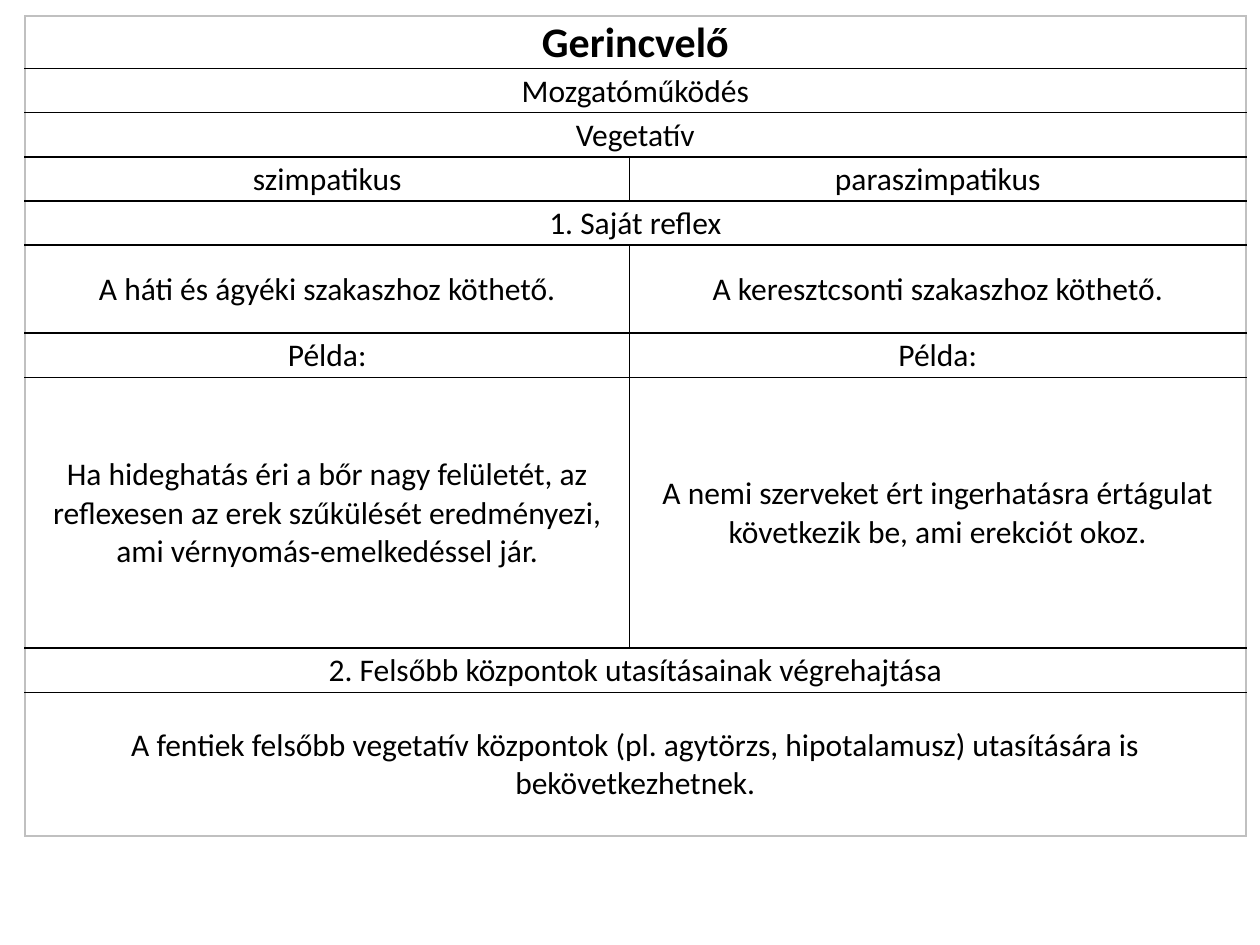
from lxml.etree import SubElement
from pptx import Presentation
from pptx.dml.color import RGBColor
from pptx.enum.text import MSO_ANCHOR as Anchor, PP_ALIGN as Align
from pptx.oxml.ns import qn
from pptx.util import Pt

INNER, OUTER = "000000", "C0C0C0"
COLUMNS = [345.6, 352.1]
LINE = 25.2
# Row height followed by its cell texts; a single text spans both columns.
ROWS = [
    (30, "Gerincvelő"),
    (LINE, "Mozgatóműködés"),
    (LINE, "Vegetatív"),
    (LINE, "szimpatikus", "paraszimpatikus"),
    (LINE, "1. Saját reflex"),
    (2 * LINE, "A háti és ágyéki szakaszhoz köthető.",
     "A keresztcsonti szakaszhoz köthető."),
    (LINE, "Példa:", "Példa:"),
    (154.8, "Ha hideghatás éri a bőr nagy felületét, az reflexesen az erek "
     "szűkülését eredményezi, ami vérnyomás-emelkedéssel jár.",
     "A nemi szerveket ért ingerhatásra értágulat következik be, ami erekciót okoz."),
    (LINE, "2. Felsőbb központok utasításainak végrehajtása"),
    (82, "A fentiek felsőbb vegetatív központok (pl. agytörzs, hipotalamusz) "
     "utasítására is bekövetkezhetnek."),
]


def color(hex_text):
    return RGBColor.from_string(hex_text)


def set_borders(cell, colors):
    """Draw 1 pt borders; colors are for left, right, top and bottom."""
    properties = cell._tc.get_or_add_tcPr()
    for side, hex_text in zip("LRTB", colors):
        line = SubElement(properties, qn(f"a:ln{side}"), w=str(Pt(1)))
        fill = SubElement(line, qn("a:solidFill"))
        SubElement(fill, qn("a:srgbClr"), val=hex_text)


def write_cell(cell, text, size, bold):
    cell.text_frame.text = text
    para = cell.text_frame.paragraphs[0]
    para.alignment = Align.CENTER
    for span in para.runs:
        span.font.name = "Calibri"
        span.font.size = Pt(size)
        span.font.bold = bold
        span.font.color.rgb = color("000000")


def add_reflex_table(page, left, top, width, height):
    table = page.shapes.add_table(len(ROWS), len(COLUMNS), Pt(left), Pt(top),
                                  Pt(width), Pt(height)).table
    table.first_row = table.horz_banding = False
    for column, column_width in zip(table.columns, COLUMNS):
        column.width = Pt(column_width)

    for row, (row_height, *texts) in enumerate(ROWS):
        table.rows[row].height = Pt(row_height)
        spans = len(texts) == 1
        for index in range(len(COLUMNS)):
            cell = table.cell(row, index)
            set_borders(cell, (
                OUTER if spans or index == 0 else INNER,
                OUTER if spans or index == 1 else INNER,
                OUTER if row == 0 else INNER,
                OUTER if row == len(ROWS) - 1 else INNER,
            ))
            cell.fill.background()
            cell.vertical_anchor = Anchor.MIDDLE
            cell.margin_left = cell.margin_right = cell.margin_top = Pt(0.7)
            cell.margin_bottom = Pt(0)
        if spans:
            table.cell(row, 0).merge(table.cell(row, 1))
        for index, text in enumerate(texts):
            write_cell(table.cell(row, index), text, 24 if row == 0 else 18, row == 0)


def main():
    deck = Presentation()
    deck.slide_width, deck.slide_height = Pt(720), Pt(540)
    page = deck.slides.add_slide(deck.slide_layouts[6])
    add_reflex_table(page, 14.2, 9.2, sum(COLUMNS), sum(row[0] for row in ROWS))
    deck.save("out.pptx")


if __name__ == "__main__":
    main()
